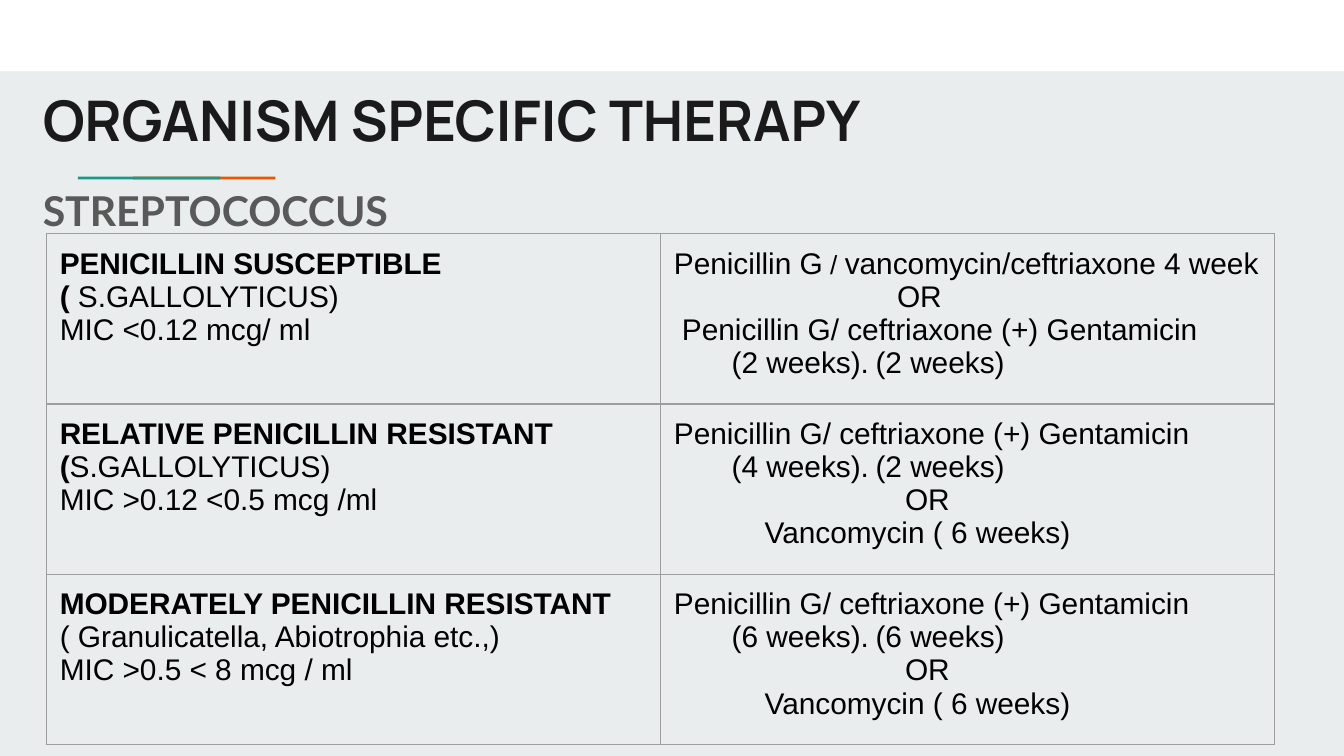
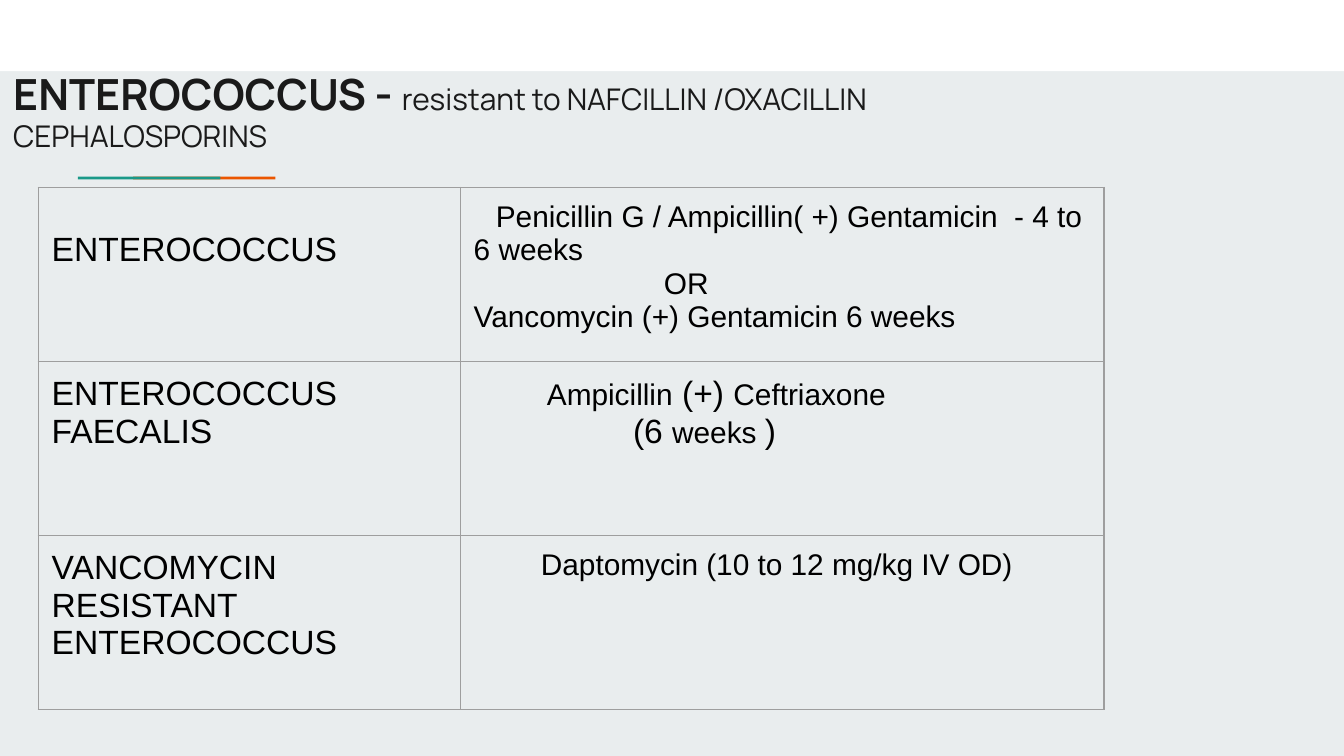
from lxml import etree
from pptx import Presentation
from pptx.dml.color import RGBColor
from pptx.enum import shapes, text
from pptx.oxml import ns
from pptx.util import Pt

PX = 4572
WIDTH, HEIGHT = 2000, 1125
MARGIN = 20
COLORS = {
    "page": "E9EDEE",
    "band": "FFFFFF",
    "orange": "EB5600",
    "teal": "1A9988",
    "title": "1A1A1A",
    "subtitle": "595959",
    "body": "000000",
    "border": "9E9E9E",
}


def color(name):
    return RGBColor.from_string(COLORS[name])


def add_span(para, content, size=16, bold=False, font="Arial", ink="body"):
    span = para.add_run()
    span.text = content
    span.font.size = Pt(size)
    span.font.bold = bold
    span.font.name = font
    span.font.color.rgb = color(ink)


def line(*spans, indent=0, tab=0):
    return {"spans": spans, "indent": indent, "tab": tab}


def bold(content):
    return content, {"bold": True}


def sized(content, size):
    return content, {"size": size}


def write(frame, lines, spacing=None, **style):
    frame.word_wrap = True
    for index, entry in enumerate(lines):
        para = frame.paragraphs[0] if index == 0 else frame.add_paragraph()
        para.alignment = text.PP_ALIGN.LEFT
        if spacing:
            para.line_spacing = spacing
        props = para._p.get_or_add_pPr()
        props.set("marL", "0")
        props.set("indent", str(entry["indent"] * PX))
        if entry["tab"]:
            stops = etree.SubElement(props, ns.qn("a:tabLst"))
            etree.SubElement(stops, ns.qn("a:tab"), pos=str(entry["tab"] * PX), algn="l")
        for item in entry["spans"]:
            content, extra = (item, {}) if isinstance(item, str) else item
            add_span(para, content, **{**style, **extra})


def set_margins(target, top=MARGIN):
    target.margin_left = target.margin_right = target.margin_bottom = MARGIN * PX
    target.margin_top = top * PX


class Builder:
    def __init__(self):
        self.deck = Presentation()
        self.deck.slide_width = WIDTH * PX
        self.deck.slide_height = HEIGHT * PX
        self.page = None

    def new_page(self):
        self.page = self.deck.slides.add_slide(self.deck.slide_layouts[6])
        self.page.background.fill.solid()
        self.page.background.fill.fore_color.rgb = color("page")
        self.rectangle(0, 0, WIDTH, 106, "band")
        self.rectangle(198, 263, 212, 4, "orange")
        self.rectangle(116, 263, 212, 4, "teal")

    def rectangle(self, left, top, width, height, fill):
        box = self.page.shapes.add_shape(
            shapes.MSO_SHAPE.RECTANGLE, left * PX, top * PX, width * PX, height * PX)
        box.shadow.inherit = False
        box.fill.solid()
        box.fill.fore_color.rgb = color(fill)
        box.line.fill.background()

    def textbox(self, left, top, width, height, lines, **style):
        box = self.page.shapes.add_textbox(left * PX, top * PX, width * PX, height * PX)
        set_margins(box.text_frame)
        write(box.text_frame, lines, **style)

    def title(self, left, top, height, *spans, size):
        self.textbox(left, top, 1682, height, [line(*spans)], spacing=0.93,
                     size=size, font="Manrope", ink="title")

    def table(self, left, top, widths, row_height, rows, label_size=16, first_top=MARGIN):
        frame = self.page.shapes.add_table(
            len(rows), len(widths), left * PX, top * PX,
            sum(widths) * PX, row_height * len(rows) * PX)
        table = frame.table
        table.first_row = table.horz_banding = False
        for column, width in zip(table.columns, widths):
            column.width = width * PX
        for r, row in enumerate(rows):
            table.rows[r].height = row_height * PX
            for c, lines in enumerate(row):
                cell = table.cell(r, c)
                set_margins(cell, first_top if r == c == 0 else MARGIN)
                write(cell.text_frame, lines, size=label_size if c == 0 else 16)
                self.borders(cell)
                cell.fill.background()

    def borders(self, cell):
        props = cell._tc.get_or_add_tcPr()
        for side in ("lnL", "lnR", "lnT", "lnB"):
            edge = etree.SubElement(props, ns.qn(f"a:{side}"), w=str(Pt(0.75)))
            fill = etree.SubElement(edge, ns.qn("a:solidFill"))
            etree.SubElement(fill, ns.qn("a:srgbClr"), val=COLORS["border"])


def resistant_regimen(weeks):
    return [
        line("Penicillin G/ ceftriaxone (+) Gentamicin"),
        line(f"({weeks[0]} weeks).\t({weeks[1]} weeks)", indent=86, tab=536),
        line("OR", indent=344),
        line("Vancomycin ( 6 weeks)", indent=135),
    ]


def streptococcus(builder):
    builder.new_page()
    builder.title(44, 116, 364, bold("ORGANISM SPECIFIC THERAPY"), size=30)
    builder.textbox(44, 256, 1828, 798, [line("STREPTOCOCCUS")],
                    size=22, bold=True, font="Lato", ink="subtitle")
    builder.table(69, 348, [914, 914], 246, [
        [
            [line(bold("PENICILLIN SUSCEPTIBLE")),
             line(bold("( "), "S.GALLOLYTICUS)"),
             line("MIC <0.12 mcg/ ml")],
            [line("Penicillin G", sized(" / ", 14), "vancomycin/ceftriaxone 4 week"),
             line("OR", indent=332),
             line("Penicillin G/ ceftriaxone (+) Gentamicin", indent=12),
             line("(2 weeks).\t(2 weeks)", indent=86, tab=560)],
        ],
        [
            [line(bold("RELATIVE PENICILLIN RESISTANT")),
             line(bold("("), "S.GALLOLYTICUS)"),
             line("MIC >0.12 <0.5 mcg /ml")],
            resistant_regimen((4, 2)),
        ],
        [
            [line(bold("MODERATELY PENICILLIN RESISTANT")),
             line("( Granulicatella, Abiotrophia etc.,)"),
             line("MIC >0.5 < 8 mcg / ml")],
            resistant_regimen((6, 6)),
        ],
    ])


def enterococcus(builder):
    builder.new_page()
    builder.title(0, 88, 192, bold("ENTEROCOCCUS - "),
                  sized("resistant to NAFCILLIN /OXACILLIN CEPHALOSPORINS", 16), size=23)
    builder.table(57, 279, [628, 958], 259, [
        [
            [line("ENTEROCOCCUS")],
            [line("Penicillin G / Ampicillin( +) Gentamicin  - 4 to 6 weeks", indent=33),
             line("OR", indent=283),
             line("Vancomycin (+) Gentamicin 6 weeks")],
        ],
        [
            [line("ENTEROCOCCUS FAECALIS")],
            [line("Ampicillin", sized(" (+) ", 18), "Ceftriaxone", indent=109),
             line(sized("(6 ", 18), "weeks ", sized(")", 18), indent=237)],
        ],
        [
            [line("VANCOMYCIN RESISTANT ENTEROCOCCUS")],
            [line("Daptomycin (10 to 12 mg/kg IV OD)", indent=100)],
        ],
    ], label_size=18, first_top=65)


def main():
    builder = Builder()
    streptococcus(builder)
    enterococcus(builder)
    builder.deck.save("out.pptx")


if __name__ == "__main__":
    main()
